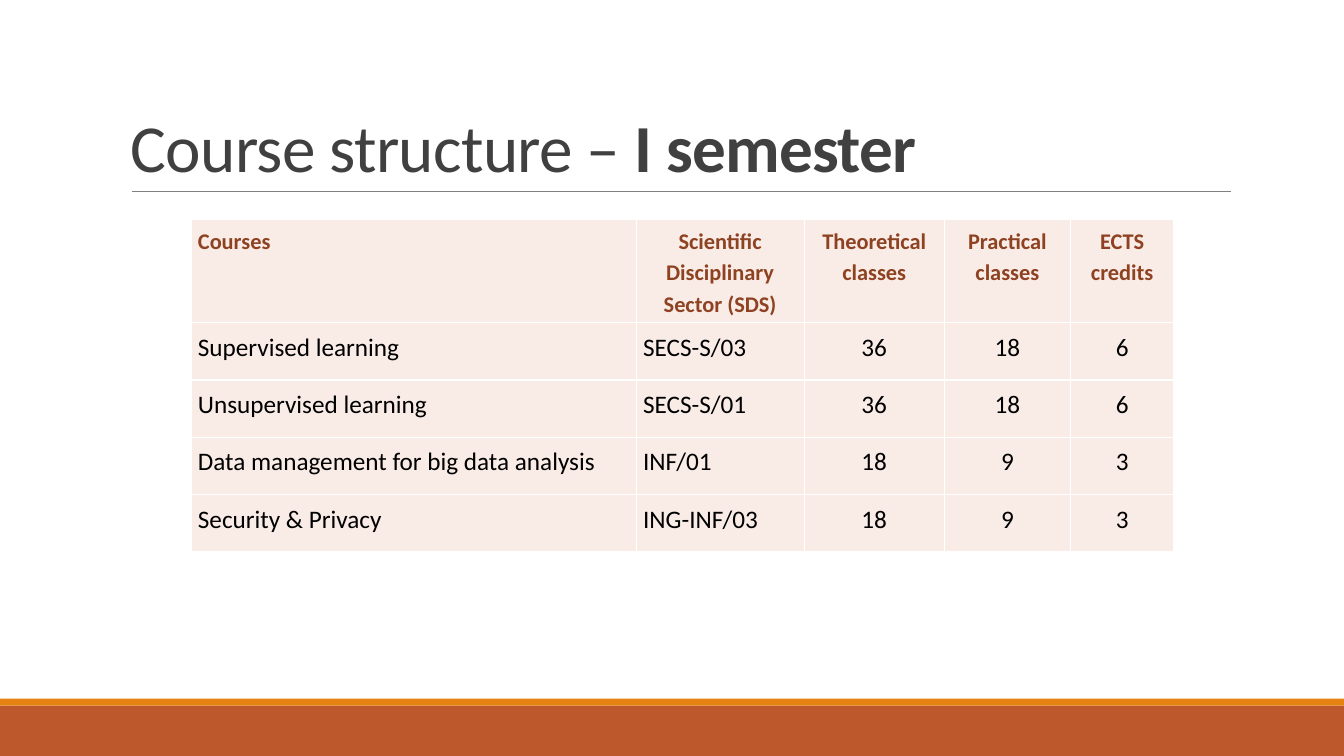
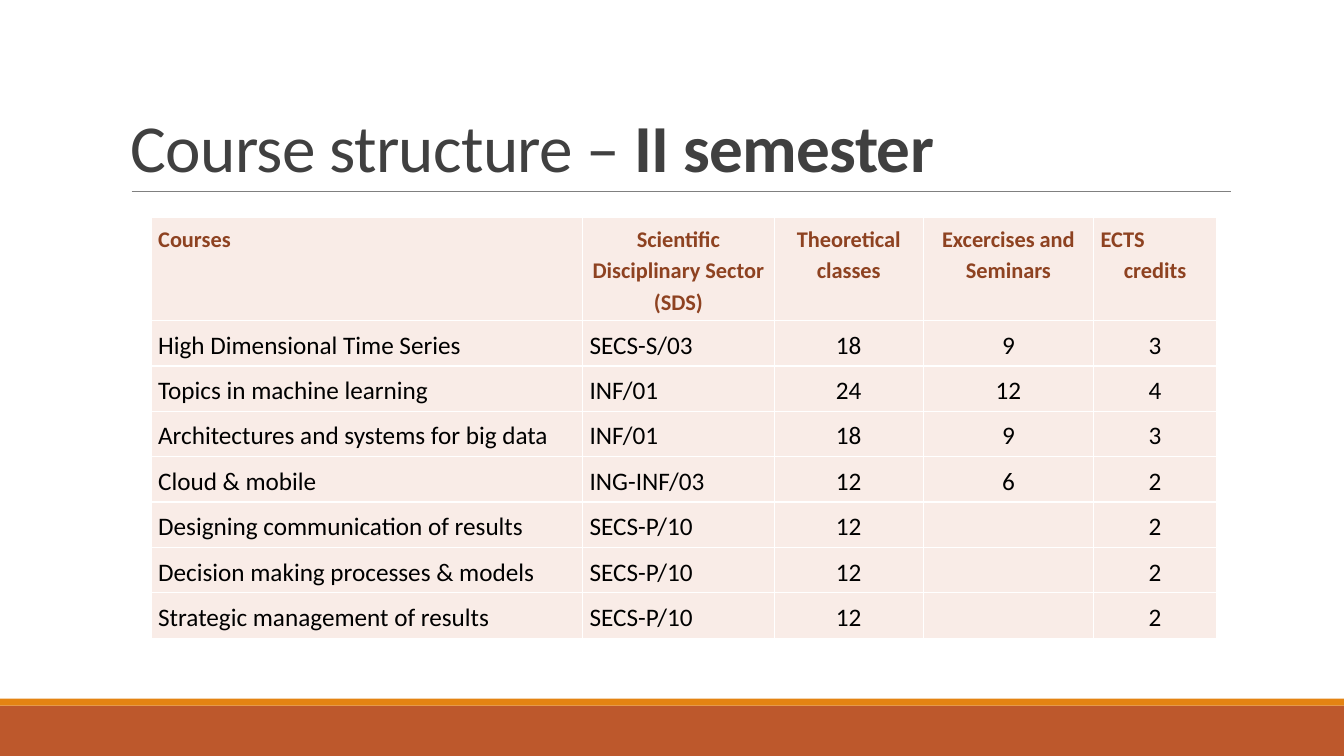
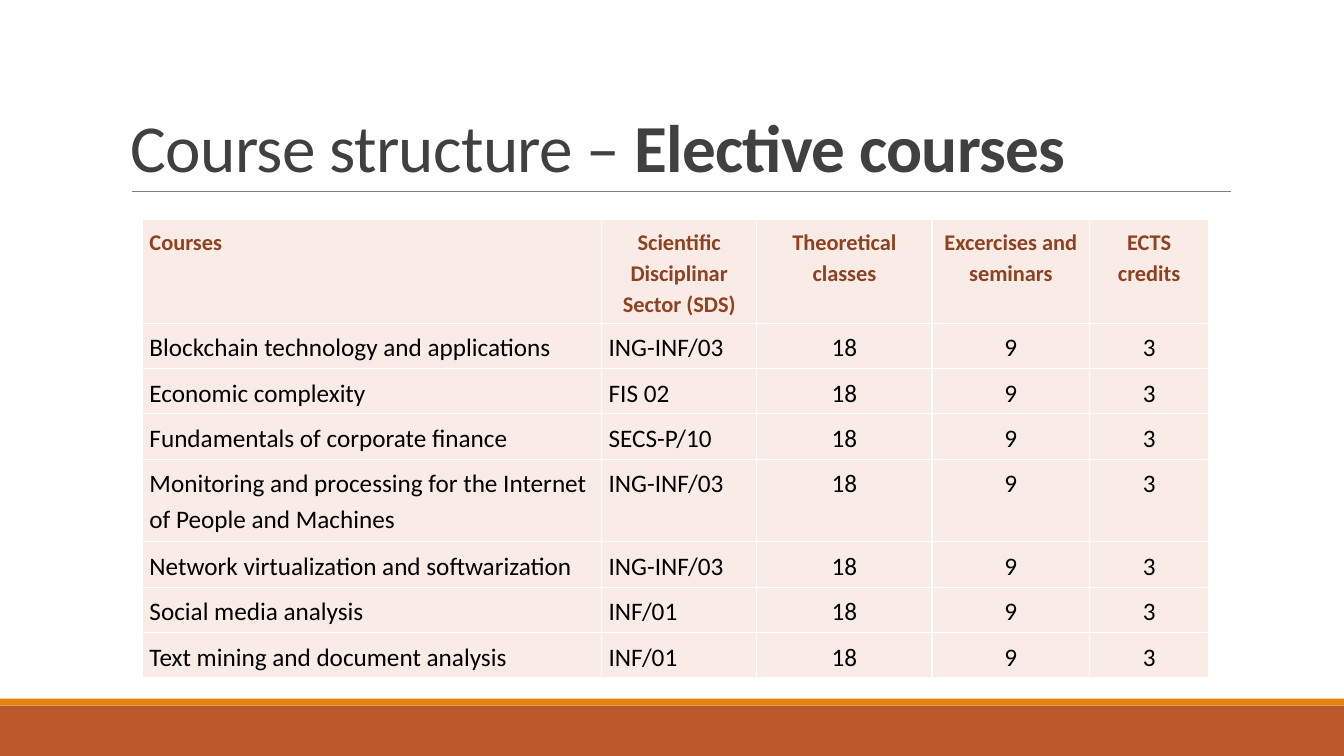
from dataclasses import dataclass

from pptx import Presentation
from pptx import util as u
from pptx.dml.color import RGBColor
from pptx.enum import shapes, text
from pptx.oxml import parse_xml
from pptx.oxml.ns import nsdecls, qn

FONT = "Calibri"
RUST, ORANGE, GREY = "BD582C", "E48312", "808080"
TITLE_INK, HEADER_INK, BODY_INK = "404040", "8E4221", "000000"
CELL_FILL, BORDER = "F9ECE7", "FFFFFF"
PAGE_WIDTH, PAGE_HEIGHT = 960, 540
HEADER_HEIGHT = 74
CENTRE, LEFT = text.PP_ALIGN.CENTER, text.PP_ALIGN.LEFT


@dataclass(frozen=True)
class Band:
    top: float
    height: float
    colour: str


@dataclass(frozen=True)
class CoursePage:
    subject: str
    left: float
    top: float
    widths: tuple[float, ...]
    heights: tuple[float, ...]
    header: tuple[str, ...]
    courses: tuple[tuple[str, ...], ...]


BANDS = (Band(504, 36, RUST), Band(499, 5, ORANGE))

PAGES = (
    CoursePage(
        "I semester", 136.4, 156.4, (318, 120, 100.2, 90, 74), (41,) * 4,
        ("Courses", "Scientific Disciplinary Sector (SDS)", "Theoretical classes",
         "Practical classes", "ECTS credits"),
        (
            ("Supervised learning", "SECS-S/03", "36", "18", "6"),
            ("Unsupervised learning", "SECS-S/01", "36", "18", "6"),
            ("Data management for big data analysis", "INF/01", "18", "9", "3"),
            ("Security & Privacy", "ING-INF/03", "18", "9", "3"),
        ),
    ),
    CoursePage(
        "II semester", 108, 155, (308.2, 136.8, 106.5, 121.7, 87.8), (32.4,) * 7,
        ("Courses", "Scientific Disciplinary Sector (SDS)", "Theoretical classes",
         "Excercises and Seminars", "ECTS\ncredits"),
        (
            ("High Dimensional Time Series", "SECS-S/03", "18", "9", "3"),
            ("Topics in machine learning", "INF/01", "24", "12", "4"),
            ("Architectures and systems for big data", "INF/01", "18", "9", "3"),
            ("Cloud & mobile", "ING-INF/03", "12", "6", "2"),
            ("Designing communication of results", "SECS-P/10", "12", "", "2"),
            ("Decision making processes & models", "SECS-P/10", "12", "", "2"),
            ("Strategic management of results", "SECS-P/10", "12", "", "2"),
        ),
    ),
    CoursePage(
        "Elective courses", 101.8, 156.8, (328, 110.8, 125.2, 112.6, 85),
        (32.4,) * 3 + (59,) + (32.4,) * 3,
        ("Courses", "Scientific Disciplinar Sector (SDS)", "Theoretical classes",
         "Excercises and seminars", "ECTS credits"),
        (
            ("Blockchain technology and applications", "ING-INF/03", "18", "9", "3"),
            ("Economic complexity", "FIS 02", "18", "9", "3"),
            ("Fundamentals of corporate finance", "SECS-P/10", "18", "9", "3"),
            ("Monitoring and processing for the Internet of People and Machines",
             "ING-INF/03", "18", "9", "3"),
            ("Network virtualization and softwarization", "ING-INF/03", "18", "9", "3"),
            ("Social media analysis", "INF/01", "18", "9", "3"),
            ("Text mining and document analysis", "INF/01", "18", "9", "3"),
        ),
    ),
)


def colour(value: str) -> RGBColor:
    return RGBColor.from_string(value)


def style_span(span, size: float, ink: str, bold: bool) -> None:
    span.font.name = FONT
    span.font.size = u.Pt(size)
    span.font.color.rgb = colour(ink)
    span.font.bold = bold


def add_frame(page) -> None:
    for band in BANDS:
        box = page.shapes.add_shape(
            shapes.MSO_SHAPE.RECTANGLE, 0, u.Pt(band.top), u.Pt(PAGE_WIDTH), u.Pt(band.height))
        box.shadow.inherit = False
        box.fill.solid()
        box.fill.fore_color.rgb = colour(band.colour)
        box.line.fill.background()
    rule = page.shapes.add_connector(
        shapes.MSO_CONNECTOR.STRAIGHT, u.Pt(94), u.Pt(136.8), u.Pt(879), u.Pt(136.8))
    rule.line.color.rgb = colour(GREY)
    rule.line.width = u.Pt(0.5)
    rule._element.spPr.append(parse_xml(f"<a:effectLst {nsdecls('a')}/>"))


def add_title(page, subject: str) -> None:
    box = page.shapes.add_textbox(u.Pt(86.4), u.Pt(22.6), u.Pt(792), u.Pt(114.2))
    frame = box.text_frame
    frame.word_wrap = True
    frame.vertical_anchor = text.MSO_ANCHOR.BOTTOM
    para = frame.paragraphs[0]
    para.line_spacing = 0.85
    for words, bold in (("Course structure – ", False), (subject, True)):
        span = para.add_run()
        span.text = words
        style_span(span, 48, TITLE_INK, bold)
        span._r.get_or_add_rPr().set("spc", "-50")


def add_borders(cell) -> None:
    properties = cell._tc.get_or_add_tcPr()
    for index, side in enumerate(("lnL", "lnR", "lnT", "lnB")):
        edge = parse_xml(
            f'<a:{side} {nsdecls("a")} w="{u.Pt(0.96)}"><a:solidFill>'
            f'<a:srgbClr val="{BORDER}"/></a:solidFill></a:{side}>')
        properties.insert(index, edge)


def fill_cell(cell, words: str, heading: bool, centred: bool) -> None:
    cell.fill.solid()
    cell.fill.fore_color.rgb = colour(CELL_FILL)
    cell.margin_left = cell.margin_right = u.Pt(5)
    cell.margin_top = cell.margin_bottom = u.Pt(3.6)
    add_borders(cell)
    cell.text_frame.text = words
    paragraphs = cell.text_frame.paragraphs
    for para in paragraphs:
        is_last = para is paragraphs[-1]
        para.alignment = CENTRE if centred and is_last else LEFT
        para.line_spacing = 1.15
        for span in para.runs:
            style_span(span, 16 if heading else 18, HEADER_INK if heading else BODY_INK, heading)


def add_courses(page, content: CoursePage) -> None:
    rows = (content.header, *content.courses)
    heights = (HEADER_HEIGHT, *content.heights)
    table = page.shapes.add_table(
        len(rows), len(content.widths), u.Pt(content.left), u.Pt(content.top),
        u.Pt(sum(content.widths)), u.Pt(sum(heights))).table
    table.first_row = table.horz_banding = False
    for column, width in zip(table.columns, content.widths):
        column.width = u.Pt(width)
    for row_index, (row, height) in enumerate(zip(rows, heights)):
        table.rows[row_index].height = u.Pt(height)
        heading = row_index == 0
        for column_index, words in enumerate(row):
            centred = column_index >= (1 if heading else 2)
            fill_cell(table.cell(row_index, column_index), words, heading, centred)


def main() -> None:
    deck = Presentation()
    deck.slide_width, deck.slide_height = u.Pt(PAGE_WIDTH), u.Pt(PAGE_HEIGHT)
    for content in PAGES:
        page = deck.slides.add_slide(deck.slide_layouts[6])
        add_frame(page)
        add_title(page, content.subject)
        add_courses(page, content)
    deck.save("out.pptx")


if __name__ == "__main__":
    main()
